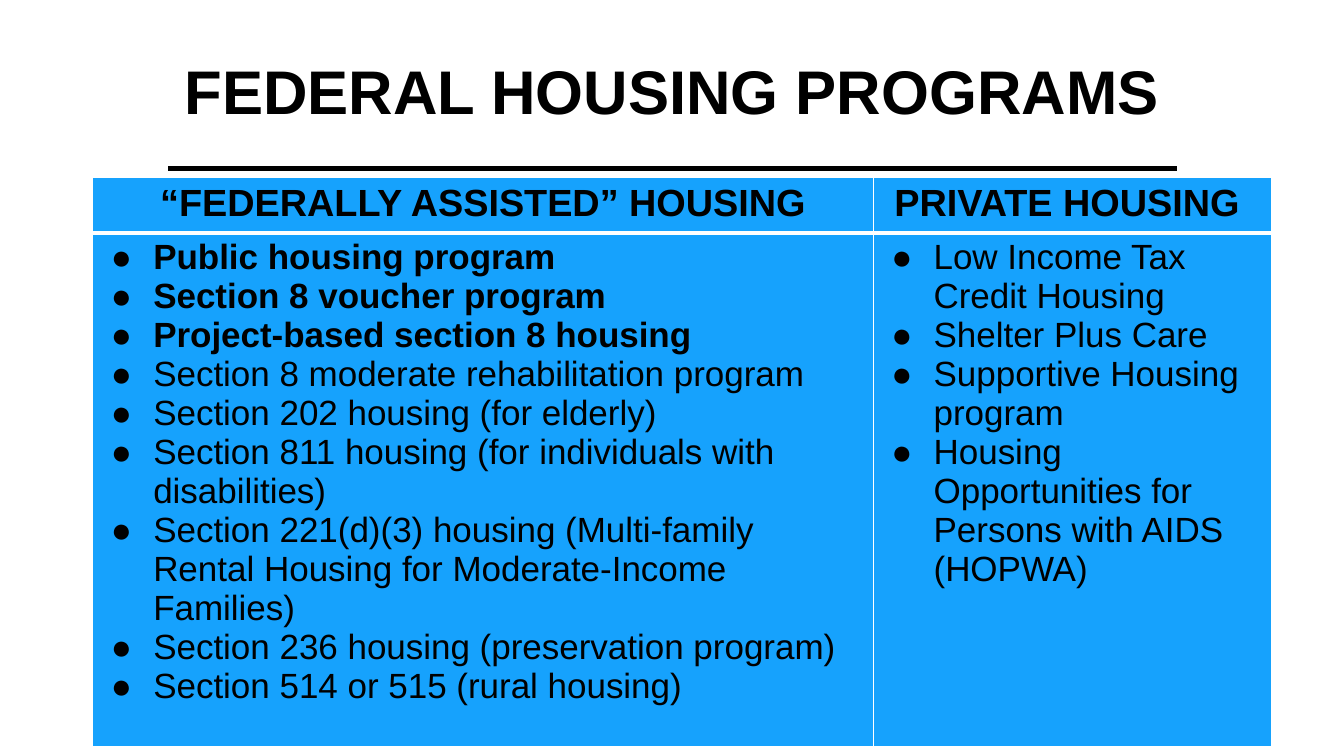
from pptx import Presentation
from pptx.dml.color import RGBColor
from pptx.enum.shapes import MSO_CONNECTOR
from pptx.enum.text import MSO_ANCHOR, PP_ALIGN
from pptx.oxml.ns import qn
from pptx.util import Inches, Pt
from lxml.etree import SubElement

COLORS = {"ink": "000000", "cell": "16A2FD", "edge": "FFFFFF"}
HEADS = ["“FEDERALLY ASSISTED” HOUSING", "PRIVATE HOUSING "]
BOLD = [
    "Public housing program",
    "Section 8 voucher program",
    "Project-based section 8 housing",
]
PLAIN = [
    "Section 8 moderate rehabilitation program",
    "Section 202 housing (for elderly)",
    "Section 811 housing (for individuals with disabilities)",
    "Section 221(d)(3) housing (Multi-family Rental Housing for Moderate-Income Families)",
    "Section 236 housing (preservation program)",
    "Section 514 or 515 (rural housing)",
]
PRIVATE = [
    "Low Income Tax Credit Housing",
    "Shelter Plus Care",
    "Supportive Housing program",
    "Housing Opportunities for Persons with AIDS (HOPWA)",
]


def rgb(name):
    return RGBColor.from_string(COLORS[name])


class Deck:
    def __init__(self):
        self.prs = Presentation()
        self.prs.slide_width, self.prs.slide_height = Inches(13.33), Inches(7.5)
        self.slide = self.prs.slides.add_slide(self.prs.slide_layouts[6])
        self.font = "Arial"

    def label(self, para, text, size, bold=True):
        run = para.add_run()
        run.text = text
        style = {"name": self.font, "size": Pt(size), "bold": bold}
        for key, value in style.items():
            setattr(run.font, key, value)
        run.font.color.rgb = rgb("ink")

    def title(self, text, box):
        frame = self.slide.shapes.add_textbox(*map(Inches, box)).text_frame
        for key, value in {"word_wrap": True, "vertical_anchor": MSO_ANCHOR.MIDDLE}.items():
            setattr(frame, key, value)
        para = frame.paragraphs[0]
        for key, value in {"alignment": PP_ALIGN.CENTER, "line_spacing": 0.9}.items():
            setattr(para, key, value)
        self.label(para, text, 44)

    def rule(self, left, right, top, width):
        line = self.slide.shapes.add_connector(
            MSO_CONNECTOR.STRAIGHT, Inches(left), Inches(top), Inches(right), Inches(top))
        line.line.color.rgb = rgb("ink")
        line.line.width = Pt(width)
        SubElement(line._element.spPr, qn("a:effectLst"))

    def grid(self, left, top, cols, rows):
        box = map(Inches, (left, top, sum(cols), sum(rows)))
        table = self.slide.shapes.add_table(len(rows), len(cols), *box).table
        for col, width in zip(table.columns, cols):
            col.width = Inches(width)
        for row, height in zip(table.rows, rows):
            row.height = Inches(height)
        return table

    def cell(self, cell, edges):
        # Borders come before the fill in the cell properties
        props = cell._tc.get_or_add_tcPr()
        for side, width in edges.items():
            edge = SubElement(props, qn(f"a:ln{side}"), w=str(Pt(width)))
            fill = SubElement(edge, qn("a:solidFill"))
            SubElement(fill, qn("a:srgbClr"), val=COLORS["edge"])
        cell.fill.solid()
        cell.fill.fore_color.rgb = rgb("cell")

    def head(self, cell, text):
        self.cell(cell, {"L": 1, "R": 1, "T": 1, "B": 3})
        para = cell.text_frame.paragraphs[0]
        para.alignment = PP_ALIGN.CENTER
        self.label(para, text, 27)

    def items(self, cell, items):
        self.cell(cell, {"L": 1, "R": 1, "T": 3, "B": 1})
        frame = cell.text_frame
        for i, (text, bold) in enumerate(items):
            para = frame.add_paragraph() if i else frame.paragraphs[0]
            props = para._p.get_or_add_pPr()
            props.set("marL", str(Inches(0.5)))
            props.set("indent", str(Inches(-0.42)))
            tint = SubElement(props, qn("a:buClr"))
            SubElement(tint, qn("a:srgbClr"), val=COLORS["ink"])
            SubElement(props, qn("a:buFont"), typeface=self.font)
            SubElement(props, qn("a:buChar"), char="●")
            self.label(para, text, 25, bold)


def main():
    deck = Deck()

    # Title
    deck.title("FEDERAL HOUSING PROGRAMS", (0.92, 0.21, 11.5, 1.45))

    # Table of programs
    table = deck.grid(0.92, 1.76, [7.74, 3.95], [0.53, 4.87])
    lists = [
        [(text, True) for text in BOLD] + [(text, False) for text in PLAIN],
        [(text, False) for text in PRIVATE],
    ]
    for col, (head, items) in enumerate(zip(HEADS, lists)):
        deck.head(table.cell(0, col), head)
        deck.items(table.cell(1, col), items)

    # Rule under the title
    deck.rule(1.67, 11.67, 1.67, 4)

    deck.prs.save("out.pptx")


if __name__ == "__main__":
    main()
